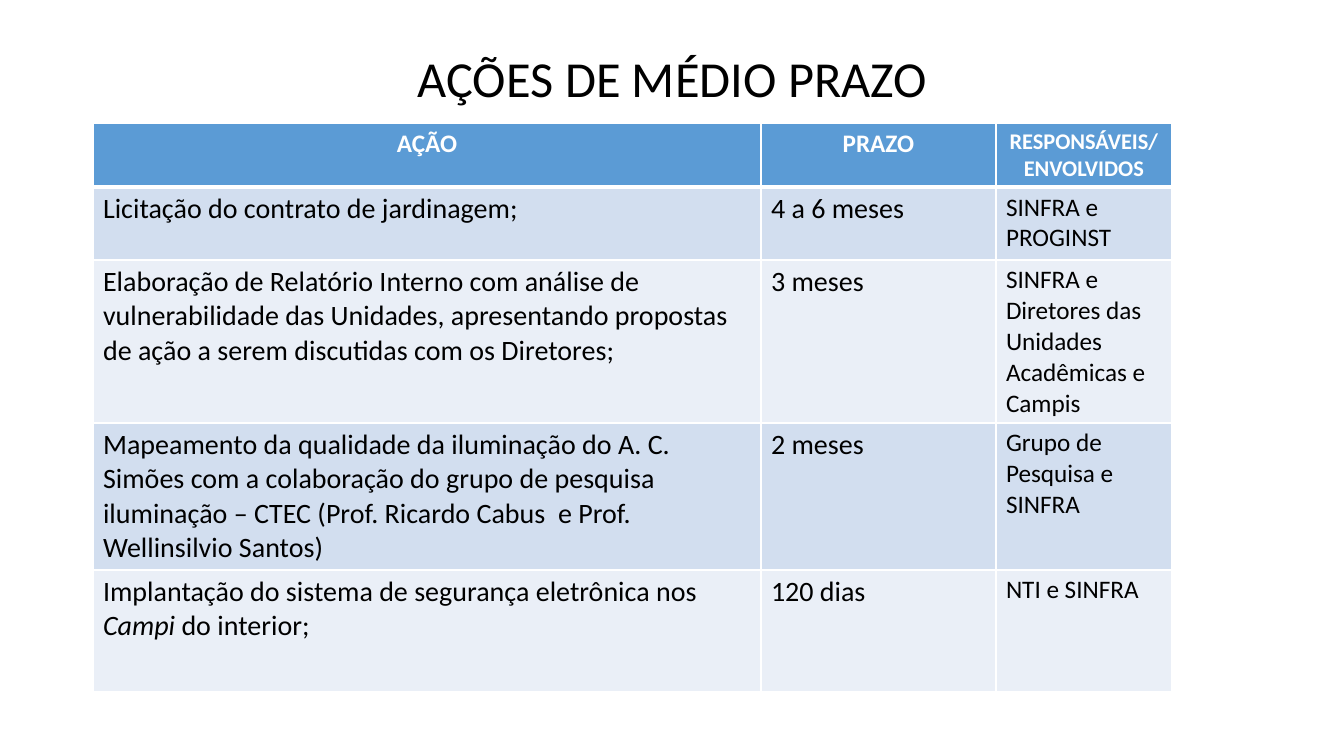
"""Build the slide listing medium-term actions, deadlines and people in charge."""
from dataclasses import dataclass

import lxml.etree
import pptx
import pptx.dml.color
import pptx.enum.text
import pptx.oxml.ns
import pptx.util

ALIGN = pptx.enum.text.PP_ALIGN
ANCHOR = pptx.enum.text.MSO_ANCHOR
EMU_PER_PX = 914400 / 100.8


@dataclass(frozen=True)
class Theme:
    """Colours, font and type sizes of the slide."""
    font: str = "Calibri"
    ink: str = "000000"
    white: str = "FFFFFF"
    header: str = "5B9BD5"
    bands: tuple[str, str] = ("D2DEEF", "EAEFF7")
    title_size: int = 36
    header_sizes: tuple[int, ...] = (18, 18, 16)
    body_sizes: tuple[int, ...] = (20, 20, 18)
    rule: int = 1
    header_rule: int = 3


@dataclass(frozen=True)
class Span:
    """A stretch of text in one style."""
    text: str
    italic: bool = False


@dataclass(frozen=True)
class Action:
    """One table row: what is done, by when and by whom."""
    height: int
    task: tuple[Span, ...]
    deadline: str
    owners: str


THEME = Theme()
TITLE = "AÇÕES DE MÉDIO PRAZO"
HEADINGS = ("AÇÃO", "PRAZO", "RESPONSÁVEIS/ENVOLVIDOS")
HEADER_HEIGHT = 64
COLUMN_WIDTHS = (668, 235, 176)
LEFT, TABLE_TOP = 93, 123
ACTIONS = (
    Action(73, (Span("Licitação do contrato de jardinagem;"),),
           "4 a 6 meses", "SINFRA e PROGINST"),
    Action(163, (Span("Elaboração de Relatório Interno com análise de vulnerabilidade das "
                      "Unidades, apresentando propostas de ação a serem discutidas com os "
                      "Diretores;"),),
           "3 meses", "SINFRA e Diretores das Unidades Acadêmicas e Campis"),
    Action(147, (Span("Mapeamento da qualidade da iluminação do A. C. Simões com a "
                      "colaboração do grupo de pesquisa iluminação – CTEC (Prof. Ricardo "
                      "Cabus  e Prof. Wellinsilvio Santos)"),),
           "2 meses", "Grupo de Pesquisa e SINFRA"),
    Action(122, (Span("Implantação do sistema de segurança eletrônica nos "),
                 Span("Campi", italic=True), Span(" do interior;")),
           "120 dias", "NTI e SINFRA"),
)


def px(length: int) -> pptx.util.Emu:
    """Turn pixels into EMU."""
    return pptx.util.Emu(round(length * EMU_PER_PX))


def rgb(colour: str) -> pptx.dml.color.RGBColor:
    """Turn a hex string into a colour."""
    return pptx.dml.color.RGBColor.from_string(colour)


def write(para, spans: tuple[Span, ...], size: int, colour: str, bold: bool = False) -> None:
    """Add the spans to a paragraph, run by run."""
    for span in spans:
        run = para.add_run()
        run.text = span.text
        run.font.name = THEME.font
        run.font.size = pptx.util.Pt(size)
        run.font.bold = bold
        run.font.italic = span.italic
        run.font.color.rgb = rgb(colour)


def add_borders(cell, top: int, bottom: int) -> None:
    """Rule the four sides of a cell in white."""
    name = pptx.oxml.ns.qn
    properties = cell._tc.get_or_add_tcPr()
    sides = {"L": THEME.rule, "R": THEME.rule, "T": top, "B": bottom}
    for side, width in sides.items():
        line = lxml.etree.SubElement(properties, name(f"a:ln{side}"),
                                     w=str(pptx.util.Pt(width)))
        fill = lxml.etree.SubElement(line, name("a:solidFill"))
        lxml.etree.SubElement(fill, name("a:srgbClr"), val=THEME.white)


def add_title(page) -> None:
    """Draw the centred title."""
    box = page.shapes.add_textbox(px(LEFT), px(40), px(1159), px(83))
    frame = box.text_frame
    frame.word_wrap = True
    frame.vertical_anchor = ANCHOR.MIDDLE
    para = frame.paragraphs[0]
    para.alignment = ALIGN.CENTER
    para.line_spacing = 0.9
    write(para, (Span(TITLE),), THEME.title_size, THEME.ink)


def fill_row(table, index: int, texts: tuple[tuple[Span, ...], ...]) -> None:
    """Fill and style one row; row zero is the header."""
    is_header = index == 0
    sizes = THEME.header_sizes if is_header else THEME.body_sizes
    top = THEME.header_rule if index == 1 else THEME.rule
    bottom = THEME.header_rule if is_header else THEME.rule
    for column, (spans, size) in enumerate(zip(texts, sizes)):
        cell = table.cell(index, column)
        add_borders(cell, top, bottom)
        cell.fill.solid()
        cell.fill.fore_color.rgb = rgb(THEME.header if is_header
                                       else THEME.bands[(index - 1) % 2])
        para = cell.text_frame.paragraphs[0]
        para.alignment = ALIGN.CENTER if is_header else ALIGN.LEFT
        write(para, spans, size, THEME.white if is_header else THEME.ink, is_header)


def add_action_table(page) -> None:
    """Draw the table of actions."""
    heights = (HEADER_HEIGHT, *(action.height for action in ACTIONS))
    table = page.shapes.add_table(len(heights), len(COLUMN_WIDTHS), px(LEFT), px(TABLE_TOP),
                                  px(sum(COLUMN_WIDTHS)), px(sum(heights))).table
    for column, width in zip(table.columns, COLUMN_WIDTHS):
        column.width = px(width)
    for row, height in zip(table.rows, heights):
        row.height = px(height)
    fill_row(table, 0, tuple((Span(heading),) for heading in HEADINGS))
    for index, action in enumerate(ACTIONS, start=1):
        fill_row(table, index, (action.task, (Span(action.deadline),), (Span(action.owners),)))


def main() -> None:
    """Build and save the deck."""
    deck = pptx.Presentation()
    deck.slide_width, deck.slide_height = px(1344), px(756)
    page = deck.slides.add_slide(deck.slide_layouts[6])
    add_title(page)
    add_action_table(page)
    deck.save("out.pptx")


if __name__ == "__main__":
    main()
